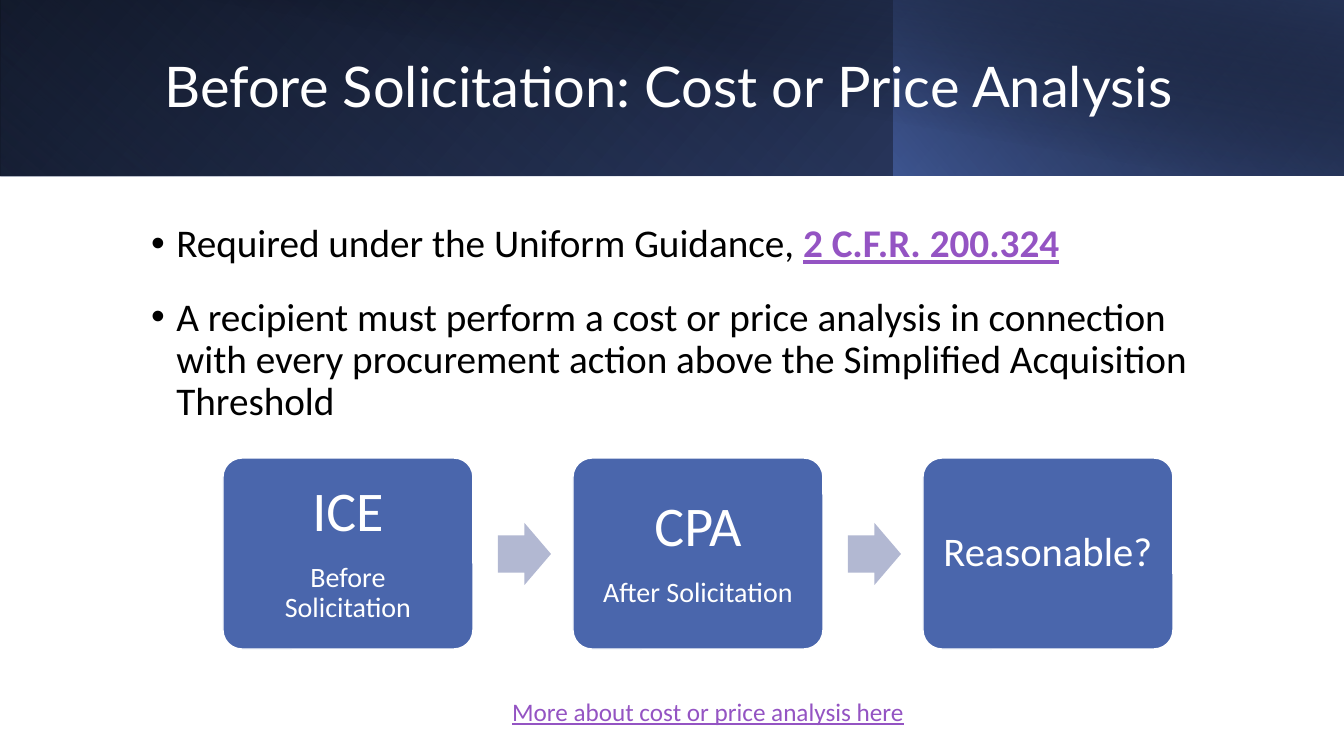
"""Build the cost or price analysis slide."""
from pptx import Presentation, util as u
from pptx.dml.color import RGBColor
from pptx.enum import shapes, text
from pptx.oxml import ns, parse_xml

SCALE = 12192000 / 1344
COLORS = {
    "white": "FFFFFF", "black": "000000", "blue": "4A66AC", "navy": "253356",
    "slate": "384C81", "arrow": "B2B8D2", "link": "9454C3",
}
BANNER = [
    ((0, 0, 1344, 176), 0, True, 140, [(0, "black", 100), (100, "slate", 100)]),
    ((0, 0, 895, 176), 180, True, 230, [(20, "blue", 0), (100, "navy", 55)]),
    ((894, 0, 450, 176), 0, True, 220, [(0, "blue", 66), (100, "black", 30)]),
    ((50, 0, 1294, 176), 0, False, 280, [(50, "black", 0), (99, "navy", 52)]),
]
BULLETS = [
    [("Required under the Uniform Guidance, ", {}),
     ("2 C.F.R. 200.324", {"color": "link", "bold": True, "underline": True})],
    [("A recipient must perform a cost or price analysis in connection with every "
      "procurement action above the Simplified Acquisition Threshold", {})],
]
STEPS = [
    (17, [("ICE", 40), ("Before Solicitation", 20)]),
    (17, [("CPA", 40), ("After Solicitation", 20)]),
    (12, [("Reasonable?", 29)]),
]
STEP_PITCH = 350


def px(value):
    return u.Emu(round(value * SCALE))


def color(name):
    return RGBColor.from_string(COLORS[name])


def place(shape, box):
    shape.left, shape.top, shape.width, shape.height = map(px, box)


def add_run(paragraph, words, size, ink, font="Calibri", bold=False, underline=False):
    run = paragraph.add_run()
    run.text = words
    run.font.name = font
    run.font.size = u.Pt(size)
    run.font.bold = bold
    run.font.underline = underline
    run.font.color.rgb = color(ink)


def get_paragraph(frame, index):
    return frame.add_paragraph() if index else frame.paragraphs[0]


def add_shape(slide, kind, box, fill=None):
    shape = slide.shapes.add_shape(kind, *map(px, box))
    shape.shadow.inherit = False
    shape.line.fill.background()
    if fill:
        shape.fill.solid()
        shape.fill.fore_color.rgb = color(fill)
    return shape


def add_gradient_panel(slide, box, rotation, flipped, angle, stops):
    panel = add_shape(slide, shapes.MSO_SHAPE.RECTANGLE, box)
    panel.rotation = rotation
    panel.fill.background()
    properties = panel._element.spPr
    if flipped:
        properties.find(ns.qn("a:xfrm")).set("flipH", "1")
    stop_xml = "".join(
        f'<a:gs pos="{position * 1000}"><a:srgbClr val="{COLORS[name]}">'
        f'<a:alpha val="{alpha * 1000}"/></a:srgbClr></a:gs>'
        for position, name, alpha in stops)
    gradient = parse_xml(
        f'<a:gradFill {ns.nsdecls("a")} rotWithShape="1"><a:gsLst>{stop_xml}</a:gsLst>'
        f'<a:lin ang="{angle * 60000}" scaled="0"/></a:gradFill>')
    properties.replace(properties.find(ns.qn("a:noFill")), gradient)


def fill_title(slide, words):
    title = slide.shapes.title
    place(title, (22, 32, 1293, 114))
    slide.shapes._spTree.append(title._element)
    frame = title.text_frame
    frame.auto_size = text.MSO_AUTO_SIZE.NONE
    frame.vertical_anchor = text.MSO_ANCHOR.MIDDLE
    paragraph = frame.paragraphs[0]
    paragraph.alignment = text.PP_ALIGN.CENTER
    paragraph.line_spacing = 0.9
    add_run(paragraph, words, 40, "white", font="Lato")


def fill_body(slide, bullets):
    body = slide.placeholders[1]
    place(body, (141, 219, 1084, 473))
    slide.shapes._spTree.append(body._element)
    frame = body.text_frame
    frame.auto_size = text.MSO_AUTO_SIZE.NONE
    for index, runs in enumerate(bullets):
        paragraph = get_paragraph(frame, index)
        paragraph.line_spacing = 0.9
        paragraph.space_before = u.Pt(10)
        paragraph.space_after = u.Pt(12)
        properties = paragraph._p.get_or_add_pPr()
        properties.set("marL", str(u.Inches(0.25)))
        properties.set("indent", str(u.Inches(-0.25)))
        properties.append(parse_xml(f'<a:buChar {ns.nsdecls("a")} char="•"/>'))
        for words, style in runs:
            add_run(paragraph, words, 28, **{"ink": style.get("color", "black"),
                    "bold": style.get("bold", False),
                    "underline": style.get("underline", False)})


def add_step(slide, left, inset, lines):
    step = add_shape(slide, shapes.MSO_SHAPE.ROUNDED_RECTANGLE, (left, 458, 250, 191), "blue")
    step.adjustments[0] = 0.1
    step.line.color.rgb = color("white")
    step.line.width = u.Pt(1)
    frame = step.text_frame
    frame.word_wrap = True
    frame.vertical_anchor = text.MSO_ANCHOR.MIDDLE
    frame.margin_left = frame.margin_right = px(inset)
    frame.margin_top = frame.margin_bottom = px(inset)
    for index, (words, size) in enumerate(lines):
        paragraph = get_paragraph(frame, index)
        paragraph.alignment = text.PP_ALIGN.CENTER
        paragraph.line_spacing = 0.9
        paragraph.space_after = u.Pt(round(size * 0.35))
        add_run(paragraph, words, size, "white")


def add_arrow(slide, left):
    arrow = add_shape(slide, shapes.MSO_SHAPE.RIGHT_ARROW, (left, 523, 53, 62), "arrow")
    arrow.adjustments[0] = 0.6
    arrow.adjustments[1] = 0.5


def add_footer_link(slide, words):
    frame = slide.shapes.add_textbox(*map(px, (72, 691, 1272, 40))).text_frame
    frame.word_wrap = True
    paragraph = frame.paragraphs[0]
    paragraph.alignment = text.PP_ALIGN.CENTER
    add_run(paragraph, words, 18, "link", underline=True)


def main():
    presentation = Presentation()
    presentation.slide_width, presentation.slide_height = px(1344), px(756)
    slide = presentation.slides.add_slide(presentation.slide_layouts[1])
    for panel in BANNER:
        add_gradient_panel(slide, *panel)
    fill_title(slide, "Before Solicitation: Cost or Price Analysis")
    fill_body(slide, BULLETS)
    for index, (inset, lines) in enumerate(STEPS):
        if index:
            add_arrow(slide, 148 + STEP_PITCH * index)
        add_step(slide, 223 + STEP_PITCH * index, inset, lines)
    add_footer_link(slide, "More about cost or price analysis here")
    presentation.save("out.pptx")


if __name__ == "__main__":
    main()
